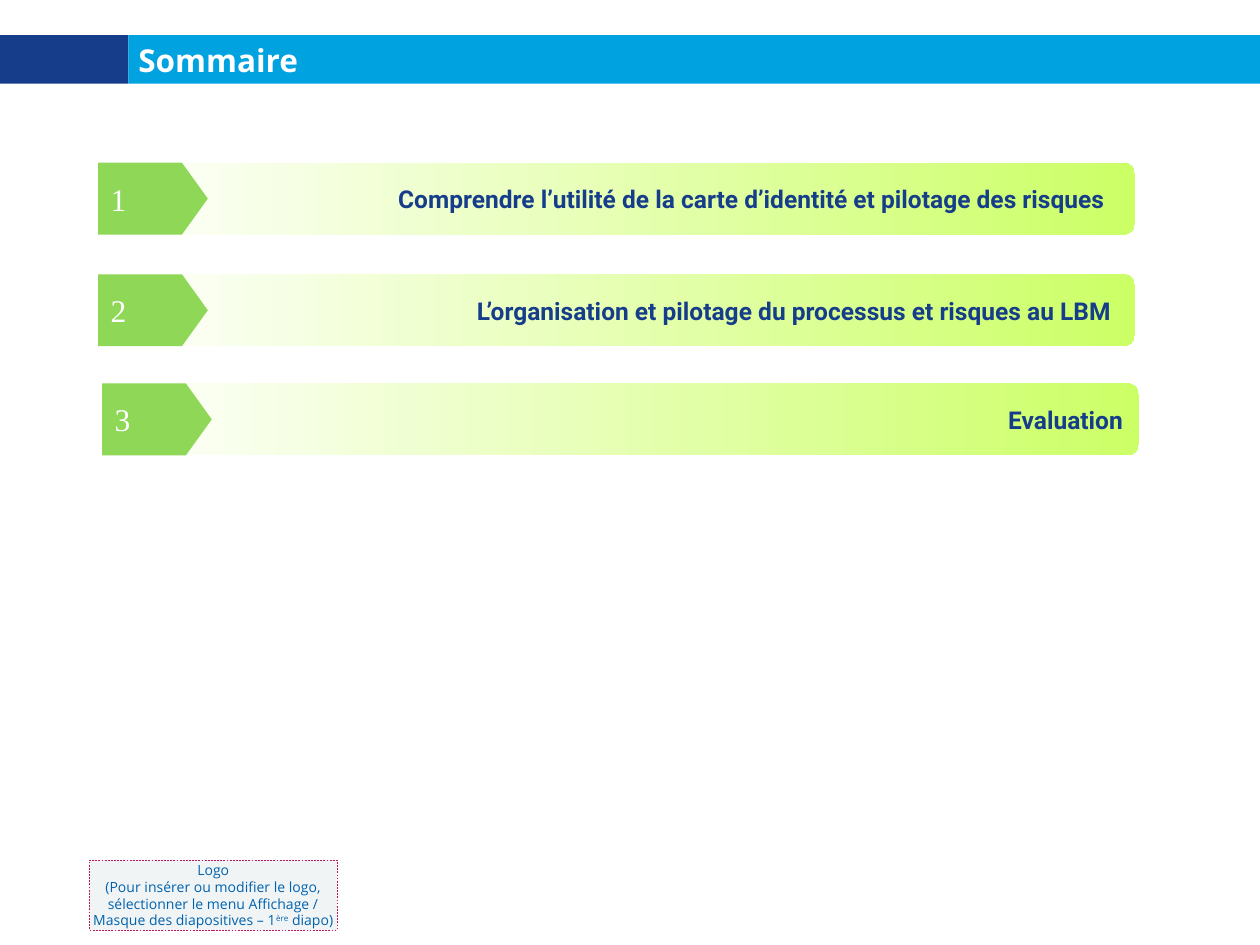
"""Build the agenda slide: title band, three numbered bars and a logo slot."""
from pptx import Presentation
from pptx.dml.color import RGBColor
from pptx.enum.dml import MSO_LINE_DASH_STYLE as DASH
from pptx.enum.shapes import MSO_SHAPE as SHAPE
from pptx.enum.text import MSO_ANCHOR as ANCHOR, PP_ALIGN as ALIGN
from pptx.util import Cm, Pt

NAVY = RGBColor(0x15, 0x3D, 0x8A)
SKY = RGBColor(0x00, 0xA2, 0xE0)
WHITE = RGBColor(0xFF, 0xFF, 0xFF)
LIME = RGBColor(0xCC, 0xFF, 0x66)
GREEN = RGBColor(0x8E, 0xD7, 0x57)
PALE = RGBColor(0xF1, 0xF4, 0xF5)
BLUE = RGBColor(0x00, 0x62, 0xAE)
MAGENTA = RGBColor(0xC0, 0x16, 0x62)

TITLE = dict(name="Open Sans", size=Pt(18), bold=True, color=WHITE)
NUMBER = dict(name="Times New Roman", size=Pt(18), color=WHITE)
LABEL = dict(name="Roboto", size=Pt(14), bold=True, color=NAVY)
HINT = dict(name="Open Sans", size=Pt(8), color=BLUE)

BAND_TOP, BAND_H, BAND_SPLIT = 0.71, 0.98, 2.59
BAR_W, BAR_H, TAG_W = 20.9, 1.45, 2.21
ITEMS = [
    (1.98, 3.28, 0.53, "Comprendre l’utilité de la carte d’identité et pilotage des risques"),
    (1.98, 5.53, 0.4, "L’organisation et pilotage du processus et risques au LBM"),
    (2.06, 7.73, 0.25, "Evaluation"),
]


def add_shape(shapes, kind, box, fill=None):
    sp = shapes.add_shape(kind, *map(Cm, box))
    sp.shadow.inherit = False
    sp.line.fill.background()
    if fill is not None:
        sp.fill.solid()
        sp.fill.fore_color.rgb = fill
    return sp


def add_run(p, text, fmt):
    r = p.add_run()
    r.text = text
    for key, value in fmt.items():
        if key == "color":
            r.font.color.rgb = value
        else:
            setattr(r.font, key, value)
    return r


def format_frame(sp, align=ALIGN.LEFT, **margins):
    tf = sp.text_frame
    tf.word_wrap = True
    tf.vertical_anchor = ANCHOR.MIDDLE
    for side, value in margins.items():
        setattr(tf, f"margin_{side}", Cm(value))
    tf.paragraphs[0].alignment = align
    return tf


def add_title(shapes, text):
    add_shape(shapes, SHAPE.RECTANGLE, (0, BAND_TOP, BAND_SPLIT, BAND_H), NAVY)
    add_shape(shapes, SHAPE.RECTANGLE, (BAND_SPLIT, BAND_TOP, 25.4 - BAND_SPLIT, BAND_H), SKY)
    sp = shapes.add_textbox(Cm(2.79), Cm(BAND_TOP), Cm(21.79), Cm(BAND_H))
    tf = format_frame(sp, left=0, top=0, right=0, bottom=0)
    add_run(tf.paragraphs[0], text, TITLE)


def add_item(shapes, number, left, top, right_gap, text):
    group = shapes.add_group_shape().shapes
    bar = add_shape(group, SHAPE.ROUNDED_RECTANGLE, (left, top, BAR_W, BAR_H))
    bar.fill.gradient()
    bar.fill.gradient_angle = 0
    for stop, color in zip(bar.fill.gradient_stops, (WHITE, LIME)):
        stop.color.rgb = color
    tf = format_frame(bar, ALIGN.RIGHT, right=right_gap)
    add_run(tf.paragraphs[0], text, LABEL)

    tag = add_shape(group, SHAPE.PENTAGON, (left, top, TAG_W, BAR_H), GREEN)
    tag.adjustments[0] = 0.36
    add_run(format_frame(tag).paragraphs[0], str(number), NUMBER)


def add_logo_slot(shapes):
    sp = add_shape(shapes, SHAPE.RECTANGLE, (1.8, 17.34, 5, 1.41), PALE)
    sp.line.color.rgb = MAGENTA
    sp.line.width = Pt(0.25)
    sp.line.dash_style = DASH.DASH
    tf = format_frame(sp, ALIGN.CENTER, left=0, top=0.1, right=0, bottom=0.1)
    add_run(tf.paragraphs[0], "Logo", HINT)
    p = tf.add_paragraph()
    p.alignment = ALIGN.CENTER
    add_run(p, "(Pour insérer ou modifier le logo, sélectionner le menu Affichage / "
               "Masque des diapositives – 1", HINT)
    r = add_run(p, "ère", HINT)
    r._r.get_or_add_rPr().set("baseline", "30000")
    add_run(p, " diapo)", HINT)


def main():
    prs = Presentation()
    prs.slide_width, prs.slide_height = Cm(25.4), Cm(19.05)
    s = prs.slides.add_slide(prs.slide_layouts[6])
    add_title(s.shapes, "Sommaire")
    add_logo_slot(s.shapes)
    for number, item in enumerate(ITEMS, 1):
        add_item(s.shapes, number, *item)
    prs.save("out.pptx")


if __name__ == "__main__":
    main()
